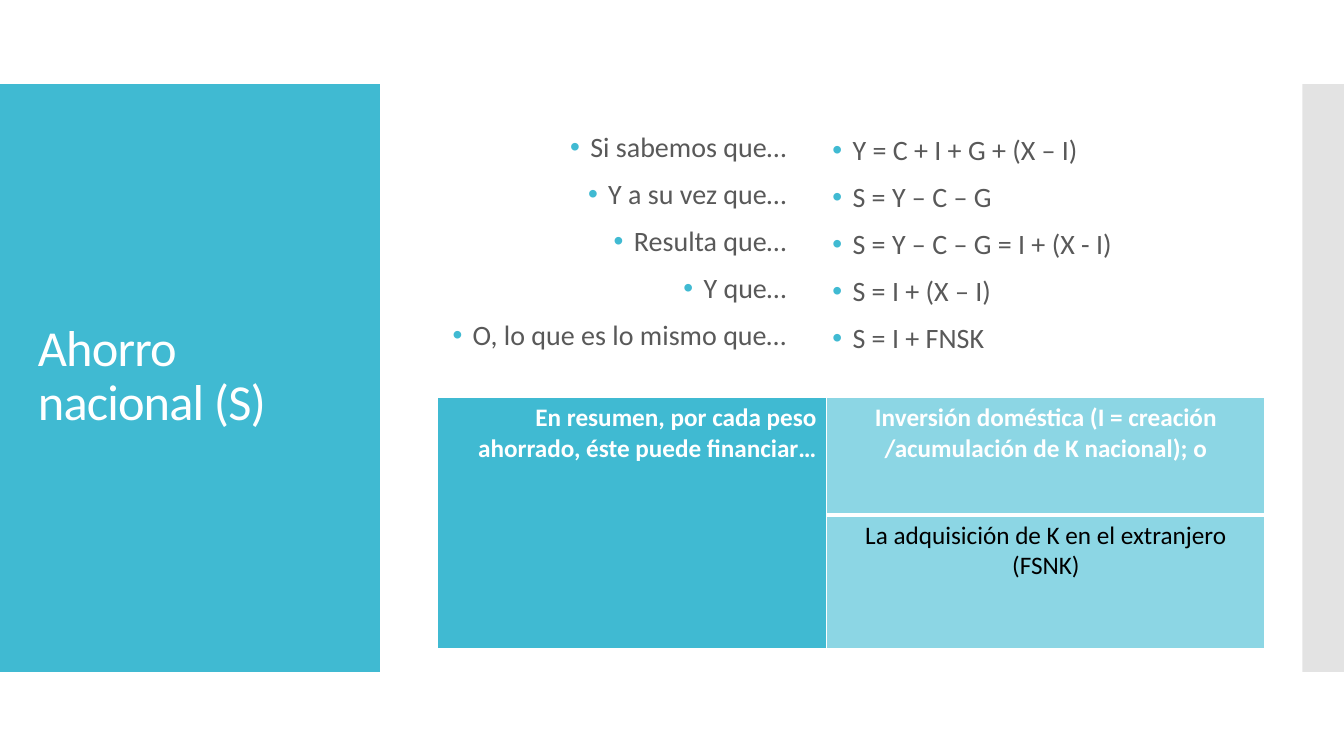
from lxml import etree
from pptx import Presentation
from pptx.dml.color import RGBColor
from pptx.enum.shapes import MSO_SHAPE
from pptx.enum.text import MSO_ANCHOR, PP_ALIGN
from pptx.oxml.ns import qn
from pptx.util import Pt

RECT = MSO_SHAPE.RECTANGLE
MIDDLE = MSO_ANCHOR.MIDDLE
LEFT, CENTER, RIGHT = PP_ALIGN.LEFT, PP_ALIGN.CENTER, PP_ALIGN.RIGHT
COLORS = {"teal": "40BAD2", "pale": "8CD6E4", "gray": "C8C8C8",
          "body": "595959", "white": "FFFFFF", "black": "000000"}


def add_run(paragraph, text, size, color, bold=False):
    run = paragraph.add_run()
    run.text = text
    run.font.name = "Calibri"
    run.font.size = Pt(size)
    run.font.bold = bold
    run.font.color.rgb = RGBColor.from_string(COLORS[color])
    return run


def add_color(parent, color):
    return etree.SubElement(parent, qn("a:srgbClr"), val=COLORS[color])


prs = Presentation()
prs.slide_width, prs.slide_height = Pt(960), Pt(540)
slide = prs.slides.add_slide(prs.slide_layouts[6])

# Side panels
for left, width, color in [(0, 271.4, "teal"), (930.2, 29.8, "gray")]:
    panel = slide.shapes.add_shape(RECT, Pt(left), Pt(60), Pt(width), Pt(420))
    panel.shadow.inherit = False
    panel.fill.solid()
    panel.fill.fore_color.rgb = RGBColor.from_string(COLORS[color])
    panel.line.fill.background()
    if color == "gray":
        tint = panel.fill._xPr.find(".//" + qn("a:srgbClr"))
        etree.SubElement(tint, qn("a:alpha"), val="50000")

# Title
title = slide.shapes.add_textbox(Pt(20), Pt(88.5), Pt(232), Pt(362)).text_frame
title.word_wrap = True
title.vertical_anchor = MIDDLE
title.paragraphs[0].line_spacing = 0.9
heading = add_run(title.paragraphs[0], "Ahorro nacional (S)", 36, "white")
heading.font._element.set("spc", "-60")

# Premises on the left, equations on the right
premises = ["Si sabemos que…", "Y a su vez que…", "Resulta que…", "Y que…",
            "O, lo que es lo mismo que…"]
equations = ["Y = C + I + G + (X – I)", "S = Y – C – G",
             "S = Y – C – G = I + (X - I)", "S = I + (X – I)", "S = I + FNSK"]
for (left, top, width, height), align, lines in [
        ((304.6, 68.4, 264.2, 243.4), RIGHT, premises),
        ((587.5, 88.6, 326.2, 208), LEFT, equations)]:
    column = slide.shapes.add_textbox(Pt(left), Pt(top), Pt(width), Pt(height)).text_frame
    column.word_wrap = True
    column.vertical_anchor = MIDDLE
    column.margin_bottom = Pt(37.6)
    for i, line in enumerate(lines):
        item = column.add_paragraph() if i else column.paragraphs[0]
        item.alignment = align
        item.line_spacing = 0.9
        item.space_before = Pt(12)
        add_run(item, line, 20, "body")
        props = item._p.get_or_add_pPr()
        props.set("marL", str(Pt(14.4)))
        props.set("indent", str(-Pt(14.4)))
        add_color(etree.SubElement(props, qn("a:buClr")), "teal")
        etree.SubElement(props, qn("a:buFont"), typeface="Arial")
        etree.SubElement(props, qn("a:buChar"), char="•")

# Summary table
summary = slide.shapes.add_table(2, 2, Pt(312.6), Pt(284), Pt(591), Pt(179)).table
for column, width in zip(summary.columns, (278, 313)):
    column.width = Pt(width)
for row, height in zip(summary.rows, (84, 95)):
    row.height = Pt(height)
summary.cell(0, 0).merge(summary.cell(1, 0))

cells = [
    (0, 0, "En resumen, por cada peso ahorrado, éste puede financiar…",
     RIGHT, "teal", "white", True),
    (0, 1, "Inversión doméstica (I = creación /acumulación de K nacional); o",
     CENTER, "pale", "white", True),
    (1, 1, "La adquisición de K en el extranjero (FSNK)",
     CENTER, "pale", "black", False),
]
for row, col, text, align, fill, color, bold in cells:
    cell = summary.cell(row, col)
    statement = cell.text_frame.paragraphs[0]
    statement.alignment = align
    add_run(statement, text, 18, color, bold)
    borders = cell._tc.get_or_add_tcPr()
    for side in "LRTB":
        inner = (row, side) in [(0, "B"), (1, "T")] and col == 1
        edge = etree.SubElement(borders, qn("a:ln" + side), w=str(Pt(3 if inner else 1)))
        add_color(etree.SubElement(edge, qn("a:solidFill")), "white")
    cell.fill.solid()
    cell.fill.fore_color.rgb = RGBColor.from_string(COLORS[fill])

prs.save("out.pptx")
